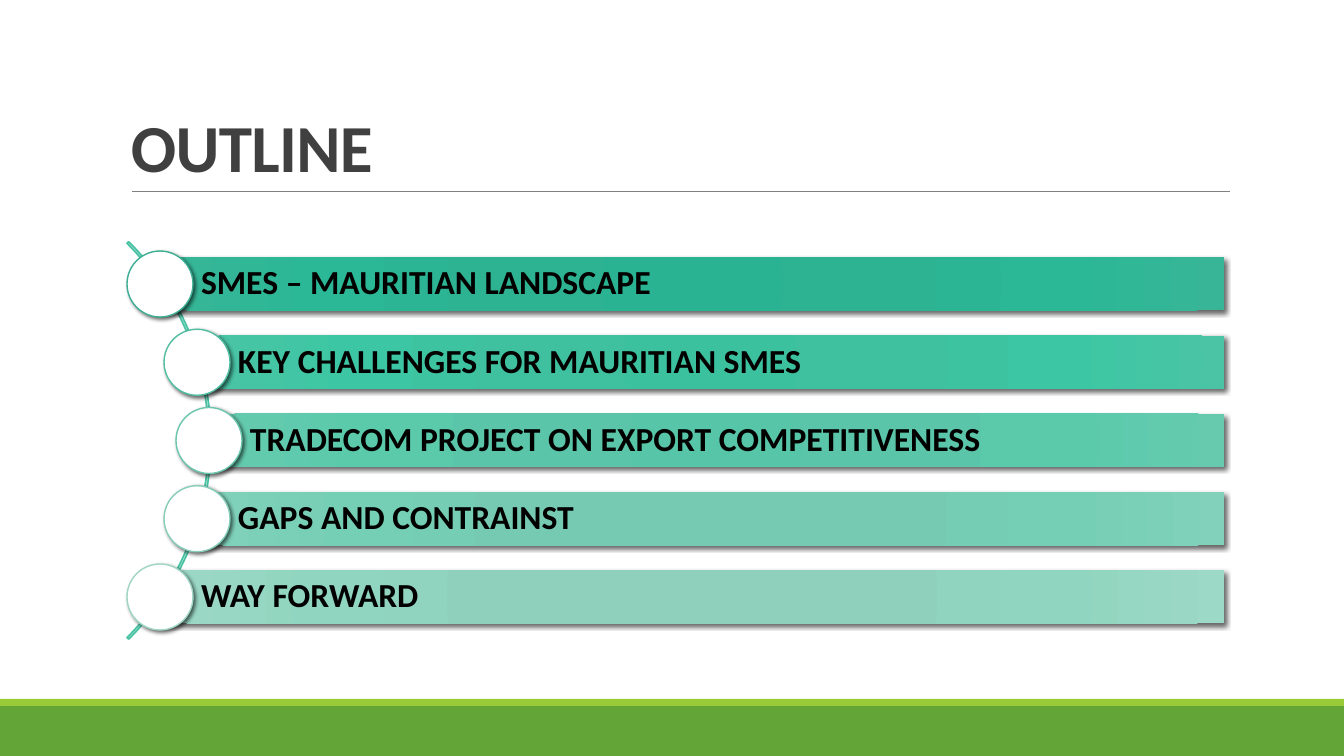
from dataclasses import dataclass

import pptx
import pptx.dml.color
import pptx.enum.shapes
import pptx.enum.text
import pptx.oxml
import pptx.oxml.ns
import pptx.util

SHAPE = pptx.enum.shapes.MSO_SHAPE
ANCHOR = pptx.enum.text.MSO_ANCHOR
ALIGN = pptx.enum.text.PP_ALIGN


@dataclass(frozen=True)
class Theme:
    font: str = "Calibri"
    title_size: int = 48
    topic_size: int = 24
    title: str = "404040"
    topic: str = "000000"
    rule: str = "808080"
    footer: str = "63A537"
    footer_edge: str = "99CB38"
    arc: str = "4AC2A4"
    marker: str = "FFFFFF"
    shadow: str = "000000"


THEME = Theme()
GRADIENT_STOPS = (0, 34, 70, 100)
TOPICS = [
    ("SMES – MAURITIAN LANDSCAPE", 33, "3EAF94", ("2AB392", "2DB292", "2BB896", "38B597")),
    ("KEY CHALLENGES FOR MAURITIAN SMES", 70, "51BEA2", ("3CC19F", "3FC09F", "3DC6A3", "4BC4A5")),
    ("TRADECOM PROJECT ON EXPORT COMPETITIVENESS", 82, "6BC6AD", ("57C5A7", "5AC5A8", "5ACAAB", "67CAAF")),
    ("GAPS AND CONTRAINST", 70, "86CEB9", ("72CAB0", "75CAB1", "75CFB5", "82D1BA")),
    ("WAY FORWARD", 33, "9FD6C5", ("8DCFBB", "8FD0BC", "90D5BF", "9CD9C6")),
]


def px(length):
    return pptx.util.Emu(round(length * 914400 / 100.8))


def rgb(value):
    return pptx.dml.color.RGBColor.from_string(value)


def element(tag, attributes="", content=""):
    return pptx.oxml.parse_xml(
        f"<a:{tag} {pptx.oxml.ns.nsdecls('a')} {attributes}>{content}</a:{tag}>")


def add_shape(slide, preset, box, fill=None, line=None, line_width=1):
    shape = slide.shapes.add_shape(preset, *map(px, box))
    shape.shadow.inherit = False
    if fill:
        shape.fill.solid()
        shape.fill.fore_color.rgb = rgb(fill)
    else:
        shape.fill.background()
    if line:
        shape.line.color.rgb = rgb(line)
        shape.line.width = pptx.util.Pt(line_width)
    else:
        shape.line.fill.background()
    return shape


def cast_shadow(shape, blur):
    effects = shape._element.spPr.find(pptx.oxml.ns.qn("a:effectLst"))
    effects.append(element(
        "outerShdw",
        f'blurRad="{pptx.util.Pt(blur)}" dist="{pptx.util.Pt(2)}" dir="2700000" algn="tl" rotWithShape="0"',
        f'<a:srgbClr val="{THEME.shadow}"><a:alpha val="60000"/></a:srgbClr>'))


def fill_radial(shape, colors):
    shape.fill.gradient()
    properties = shape._element.spPr
    stops = "".join(
        f'<a:gs pos="{position * 1000}"><a:srgbClr val="{color}"/></a:gs>'
        for position, color in zip(GRADIENT_STOPS, colors))
    properties.replace(
        properties.find(pptx.oxml.ns.qn("a:gradFill")),
        element("gradFill", 'rotWithShape="1"',
                f'<a:gsLst>{stops}</a:gsLst><a:path path="circle">'
                '<a:fillToRect l="100000" t="100000" r="100000" b="100000"/></a:path>'))


def write_text(shape, text, size, color, spacing, anchor, insets):
    frame = shape.text_frame
    frame.word_wrap = True
    frame.vertical_anchor = anchor
    (frame.margin_left, frame.margin_top,
     frame.margin_right, frame.margin_bottom) = map(px, insets)
    paragraph = frame.paragraphs[0]
    paragraph.text = text
    paragraph.alignment = ALIGN.LEFT
    paragraph.line_spacing = spacing
    paragraph.font.name = THEME.font
    paragraph.font.size = pptx.util.Pt(size)
    paragraph.font.bold = True
    paragraph.font.color.rgb = rgb(color)
    return paragraph


def add_footer(slide, left, top, width, height):
    edge = 7
    add_shape(slide, SHAPE.RECTANGLE, (left, top + edge, width, height - edge), THEME.footer)
    add_shape(slide, SHAPE.RECTANGLE, (left, top, width, edge), THEME.footer_edge)


def add_title(slide, left, top, width, height):
    bottom = top + height
    rule = slide.shapes.add_connector(
        pptx.enum.shapes.MSO_CONNECTOR.STRAIGHT,
        px(left + 11), px(bottom), px(left + width), px(bottom))
    rule.line.color.rgb = rgb(THEME.rule)
    rule.line.width = pptx.util.Pt(0.5)
    rule._element.spPr.append(element("effectLst"))
    heading = slide.shapes.add_textbox(*map(px, (left, top, width, height)))
    paragraph = write_text(heading, "OUTLINE", THEME.title_size, THEME.title,
                           0.85, ANCHOR.BOTTOM, (10, 5, 10, 5))
    paragraph.runs[0].font._element.set("spc", "-50")


def add_topics(slide, left, top, width, height):
    bar_height, marker_size, arc_size = 53, 66, 562
    arc = add_shape(slide, SHAPE.BLOCK_ARC,
                    (left + 84 - arc_size, top + (height - arc_size) / 2, arc_size, arc_size),
                    line=THEME.arc, line_width=1.25)
    for index, adjustment in enumerate((189, 27, 0.004)):
        arc.adjustments[index] = adjustment
    pitch = (height - marker_size) / (len(TOPICS) - 1)
    for row, (topic, indent, outline, colors) in enumerate(TOPICS):
        center = top + marker_size / 2 + row * pitch
        bar = add_shape(slide, SHAPE.RECTANGLE,
                        (left + indent, center - bar_height / 2, width - indent, bar_height))
        fill_radial(bar, colors)
        cast_shadow(bar, 3.5)
        write_text(bar, topic, THEME.topic_size, THEME.topic, 0.9, ANCHOR.MIDDLE, (41, 7, 7, 7))
        marker = add_shape(slide, SHAPE.OVAL,
                           (left + indent - marker_size / 2, center - marker_size / 2,
                            marker_size, marker_size), THEME.marker, outline)
        cast_shadow(marker, 3)


def main():
    deck = pptx.Presentation()
    deck.slide_width, deck.slide_height = px(1344), px(756)
    slide = deck.slides.add_slide(deck.slide_layouts[6])
    add_footer(slide, 0, 699, 1344, 57)
    add_title(slide, 121, 31, 1109, 160)
    add_topics(slide, 127, 251, 1097, 379)
    deck.save("out.pptx")


if __name__ == "__main__":
    main()
